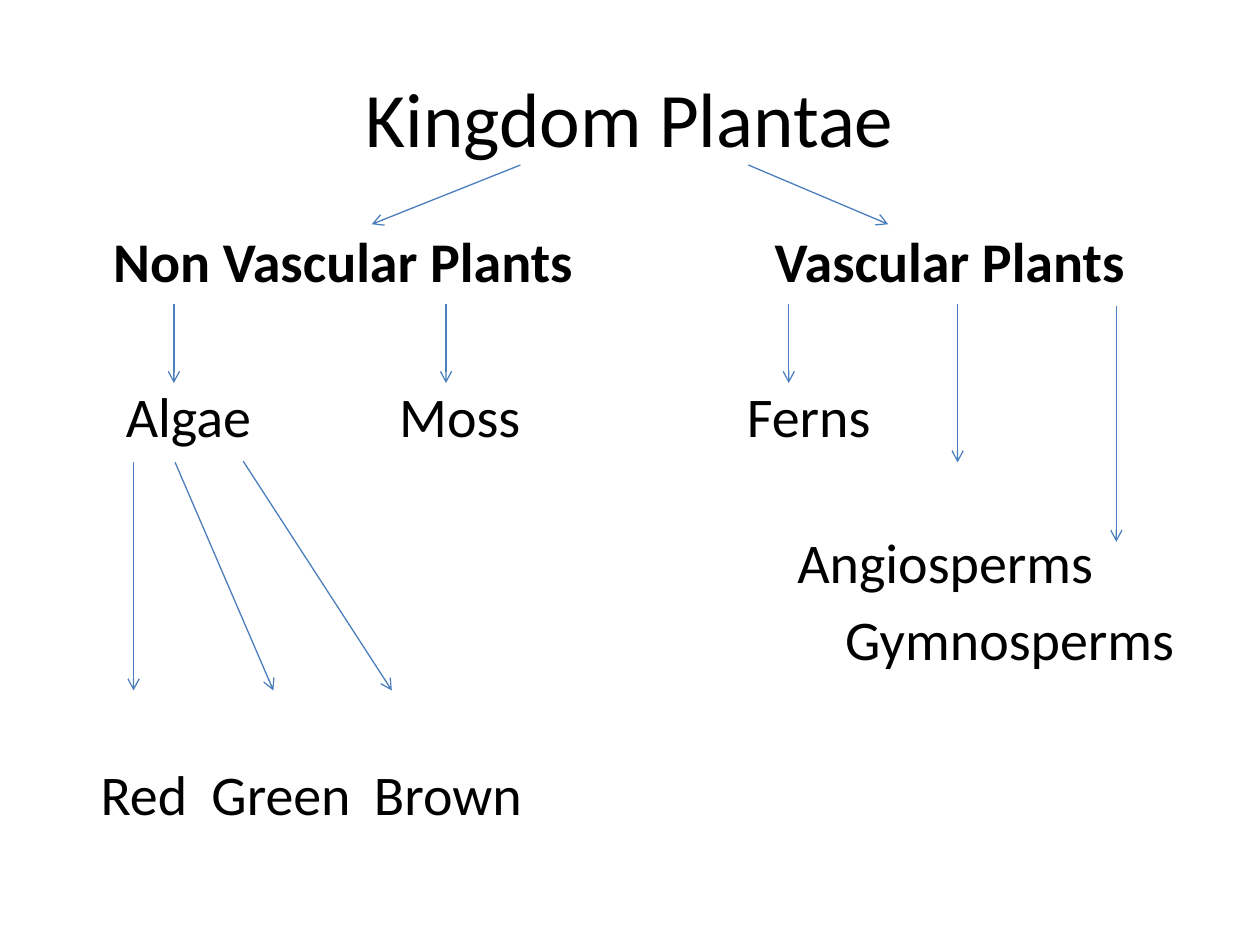
from lxml import etree
from pptx import Presentation
from pptx.dml.color import RGBColor
from pptx.enum.shapes import MSO_CONNECTOR
from pptx.enum.text import MSO_ANCHOR, PP_ALIGN
from pptx.oxml.ns import qn
from pptx.util import Inches, Pt

STRAIGHT = MSO_CONNECTOR.STRAIGHT
TOP, MIDDLE = MSO_ANCHOR.TOP, MSO_ANCHOR.MIDDLE
CENTER = PP_ALIGN.CENTER

COLORS = {"text": "000000", "arrow": "4B7EBC", "background": "FFFFFF"}

LEVELS = [
    (0, True, [("Non Vascular Plants", 0.3), ("Vascular Plants", 5.55)]),
    (50.3, False, [("Algae", 0.4), ("Moss", 2.57), ("Ferns", 5.33)]),
    (44.9, False, [("Angiosperms", 5.73)]),
    (5.6, False, [("Gymnosperms", 6.11)]),
    (50.3, False, [("Red", 0.2), ("Green", 1.08), ("Brown", 2.37)]),
]

KINGDOM_ARROWS = [(4.13, 1.31, 2.95, 1.78), (5.94, 1.31, 7.05, 1.78)]
GROUP_ARROWS = [(x, 2.41, x, 3.04) for x in (1.38, 3.54, 6.26)]
SEED_ARROWS = [(7.6, 2.41, 7.6, 3.67), (8.86, 2.43, 8.86, 4.3)]
ALGAE_ARROWS = [
    (1.06, 3.67, 1.06, 5.48),
    (1.39, 3.67, 2.17, 5.48),
    (1.93, 3.66, 3.11, 5.48),
]


class Diagram:
    font = "Calibri"

    def __init__(self, prs):
        self.s = prs.slides.add_slide(prs.slide_layouts[6])
        fill = self.s.background.fill
        fill.solid()
        fill.fore_color.rgb = self.color("background")

    def color(self, name):
        return RGBColor.from_string(COLORS[name])

    def box(self, x, y, w, h, anchor):
        sp = self.s.shapes.add_textbox(Inches(x), Inches(y), Inches(w), Inches(h))
        tf = sp.text_frame
        tf.word_wrap = True
        tf.vertical_anchor = anchor
        return tf

    def run(self, p, text, size, bold=False):
        r = p.add_run()
        r.text = text
        r.font.name = self.font
        r.font.size = Pt(size)
        r.font.bold = bold
        r.font.color.rgb = self.color("text")

    def title(self, text):
        p = self.box(0.5, 0.3, 9, 1.25, MIDDLE).paragraphs[0]
        p.alignment = CENTER
        self.run(p, text, 44)

    def levels(self, levels):
        tf = self.box(0.5, 1.75, 9, 4.95, TOP)
        for i, (space, bold, entries) in enumerate(levels):
            p = tf.add_paragraph() if i else tf.paragraphs[0]
            p.space_before = Pt(space)
            tabs = etree.SubElement(p._p.get_or_add_pPr(), qn("a:tabLst"))
            for text, x in entries:
                etree.SubElement(tabs, qn("a:tab"), pos=str(Inches(x)), algn="l")
                self.run(p, "\t" + text, 32, bold)

    def arrow(self, x1, y1, x2, y2):
        cxn = self.s.shapes.add_connector(
            STRAIGHT, Inches(x1), Inches(y1), Inches(x2), Inches(y2)
        )
        cxn.line.color.rgb = self.color("arrow")
        cxn.line.width = Pt(0.75)
        etree.SubElement(cxn.line._get_or_add_ln(), qn("a:tailEnd"), type="arrow")
        etree.SubElement(cxn._element.spPr, qn("a:effectLst"))


def main():
    prs = Presentation()
    prs.slide_width, prs.slide_height = Inches(10), Inches(7.5)
    diagram = Diagram(prs)
    diagram.title("Kingdom Plantae")
    diagram.levels(LEVELS)
    for ends in KINGDOM_ARROWS + GROUP_ARROWS + SEED_ARROWS + ALGAE_ARROWS:
        diagram.arrow(*ends)
    prs.save("out.pptx")


if __name__ == "__main__":
    main()
